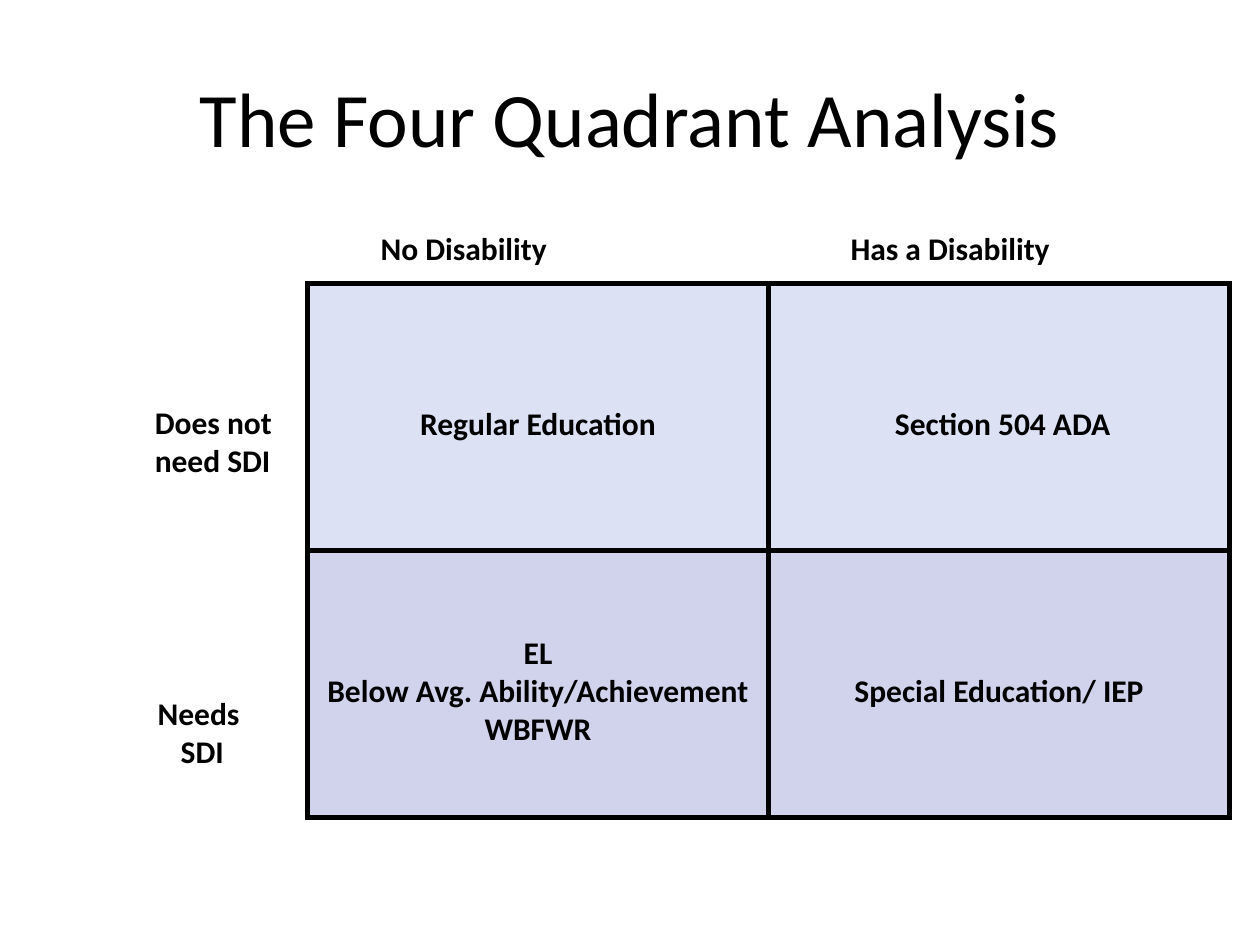
from lxml import etree
from pptx import Presentation
from pptx.dml.color import RGBColor
from pptx.enum import text
from pptx.oxml import ns
from pptx.util import Inches, Pt

TITLE = "The Four Quadrant Analysis"
COLUMN_LABELS = ["No Disability", "Has a Disability"]
ROW_LABELS = [
    (["Does not", "need SDI"], (1.13, 3.15, 1.28, 0.71), text.PP_ALIGN.LEFT),
    (["Needs ", "SDI"], (1.13, 5.46, 0.95, 0.71), text.PP_ALIGN.CENTER),
]
QUADRANTS = [
    ("DCE1F4", [["Regular Education"], [" Section 504 ADA"]]),
    ("D0D3EB", [["EL", "Below Avg. Ability/Achievement", "WBFWR"],
                ["Special Education/ IEP"]]),
]
GRID_LEFT, GRID_TOP, COLUMN_WIDTH, ROW_HEIGHT = 2.44, 2.25, 3.66, 2.12
BLACK = "000000"
CENTER = text.PP_ALIGN.CENTER


def color(value):
    return RGBColor.from_string(value)


def write(frame, lines, alignment, size=18, bold=True):
    for index, line in enumerate(lines):
        paragraph = frame.add_paragraph() if index else frame.paragraphs[0]
        paragraph.alignment = alignment
        run = paragraph.add_run()
        run.text = line
        run.font.name = "Calibri"
        run.font.size = Pt(size)
        run.font.bold = bold
        run.font.color.rgb = color(BLACK)


def add_label(slide, box, lines, alignment, wrap):
    frame = slide.shapes.add_textbox(*map(Inches, box)).text_frame
    frame.word_wrap = wrap
    frame.auto_size = text.MSO_AUTO_SIZE.SHAPE_TO_FIT_TEXT
    write(frame, lines, alignment)
    return frame


def add_borders(cell, width):
    properties = cell._tc.get_or_add_tcPr()
    for index, side in enumerate(("lnL", "lnR", "lnT", "lnB")):
        line = etree.Element(ns.qn("a:" + side), w=str(Pt(width)))
        fill = etree.SubElement(line, ns.qn("a:solidFill"))
        etree.SubElement(fill, ns.qn("a:srgbClr"), val=BLACK)
        properties.insert(index, line)


def add_quadrants(slide):
    table = slide.shapes.add_table(
        2, 2, Inches(GRID_LEFT), Inches(GRID_TOP),
        Inches(2 * COLUMN_WIDTH), Inches(2 * ROW_HEIGHT)).table
    table.first_row = table.horz_banding = False
    for row, (fill, contents) in enumerate(QUADRANTS):
        for column, lines in enumerate(contents):
            cell = table.cell(row, column)
            cell.fill.solid()
            cell.fill.fore_color.rgb = color(fill)
            cell.vertical_anchor = text.MSO_ANCHOR.MIDDLE
            cell.margin_top = Inches(0.17)
            write(cell.text_frame, lines, CENTER)
            add_borders(cell, 3)


def add_column_labels(slide):
    frame = add_label(slide, (2.58, 1.77, 6.75, 0.4),
                      ["\t".join(COLUMN_LABELS)], text.PP_ALIGN.LEFT, True)
    frame.margin_left = Inches(0.44)
    properties = frame.paragraphs[0]._p.get_or_add_pPr()
    tabs = etree.SubElement(properties, ns.qn("a:tabLst"))
    etree.SubElement(tabs, ns.qn("a:tab"), pos=str(Inches(3.73)), algn="l")


def main():
    presentation = Presentation()
    presentation.slide_width, presentation.slide_height = Inches(10), Inches(7.5)
    slide = presentation.slides.add_slide(presentation.slide_layouts[5])
    title = slide.shapes.title
    title.left, title.top, title.width, title.height = map(
        Inches, (0.5, 0.3, 9, 1.25))
    title.text_frame.vertical_anchor = text.MSO_ANCHOR.MIDDLE
    write(title.text_frame, [TITLE], CENTER, 44, False)
    add_quadrants(slide)
    for lines, box, alignment in ROW_LABELS:
        add_label(slide, box, lines, alignment, False)
    add_column_labels(slide)
    presentation.save("out.pptx")


if __name__ == "__main__":
    main()
